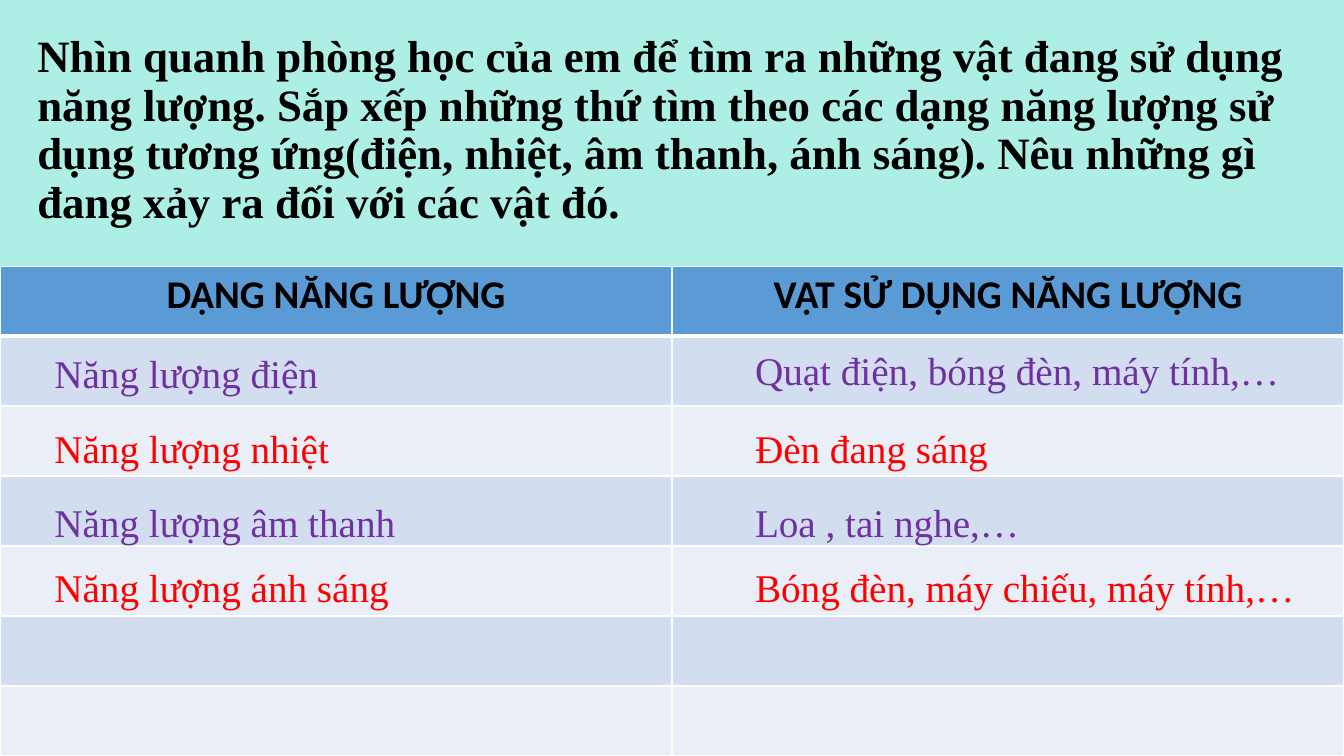
from lxml.etree import SubElement as Sub
from pptx import Presentation
from pptx.dml.color import RGBColor as RGB
from pptx.enum.text import MSO_ANCHOR as Anchor, MSO_AUTO_SIZE as Auto, PP_ALIGN as Align
from pptx.oxml.ns import qn
from pptx.util import Inches, Pt

MINT = RGB(0xAD, 0xEF, 0xE4)
BLUE = RGB(0x5B, 0x9B, 0xD5)
PALE = RGB(0xD2, 0xDE, 0xEF)
LIGHT = RGB(0xEA, 0xEF, 0xF7)
WHITE = RGB(0xFF, 0xFF, 0xFF)
BLACK = RGB(0, 0, 0)
RED = RGB(0xFF, 0, 0)
PURPLE = RGB(0x70, 0x30, 0xA0)
SERIF, SANS = "Times New Roman", "Calibri"

TITLE = ("Nhìn quanh phòng học của em để tìm ra những vật đang sử dụng năng lượng. "
         "Sắp xếp những thứ tìm theo các dạng năng lượng sử dụng tương ứng"
         "(điện, nhiệt, âm thanh, ánh sáng). Nêu những gì đang xảy ra đối với các vật đó.")
HEADS = ["DẠNG NĂNG LƯỢNG", "VẬT SỬ DỤNG NĂNG LƯỢNG"]
# Energy, its top, things that use it, their top, colour
PAIRS = [
    ("Năng lượng điện", 3.42, "Quạt điện, bóng đèn, máy tính,…", 3.39, PURPLE),
    ("Năng lượng nhiệt", 4.16, "Đèn đang sáng", 4.16, RED),
    ("Năng lượng âm thanh", 4.89, "Loa , tai nghe,…", 4.89, PURPLE),
    ("Năng lượng ánh sáng", 5.54, "Bóng đèn, máy chiếu, máy tính,…", 5.54, RED),
]


class Board:
    def __init__(self, slide):
        self.slide = slide
        fill = slide.background.fill
        fill.solid()
        fill.fore_color.rgb = MINT

    def style(self, para, face, size, color, bold=False):
        font = para.font
        font.name, font.size, font.bold = face, Pt(size), bold
        font.color.rgb = color

    def title(self, text, left, top, width, height):
        shape = self.slide.shapes.title
        shape.left, shape.top = Inches(left), Inches(top)
        shape.width, shape.height = Inches(width), Inches(height)
        frame = shape.text_frame
        frame.text = text
        frame.word_wrap = True
        frame.auto_size = Auto.NONE
        frame.vertical_anchor = Anchor.MIDDLE
        para = frame.paragraphs[0]
        para.alignment = Align.LEFT
        para.line_spacing = 0.9
        self.style(para, SERIF, 32, BLACK, True)

    def label(self, text, left, top, width, color):
        box = self.slide.shapes.add_textbox(
            Inches(left), Inches(top), Inches(width), Inches(0.57))
        frame = box.text_frame
        frame.word_wrap = True
        frame.auto_size = Auto.SHAPE_TO_FIT_TEXT
        frame.text = text
        self.style(frame.paragraphs[0], SERIF, 28, color)

    def edge(self, cell, side, width):
        props = cell._tc.get_or_add_tcPr()
        line = Sub(props, qn("a:ln" + side), w=str(Pt(width)))
        Sub(Sub(line, qn("a:solidFill")), qn("a:srgbClr"), val=str(WHITE))

    def table(self, heads, count, left, top, width, height):
        grid = self.slide.shapes.add_table(
            count, len(heads), Inches(left), Inches(top),
            Inches(width), Inches(height)).table
        for row in range(count):
            for col, head in enumerate(heads):
                cell = grid.cell(row, col)
                for side in "LRTB":
                    thick = (row, side) in ((0, "B"), (1, "T"))
                    self.edge(cell, side, 3 if thick else 1)
                cell.fill.solid()
                cell.fill.fore_color.rgb = (LIGHT, PALE)[row % 2] if row else BLUE
                if row == 0:
                    cell.text = head
                    para = cell.text_frame.paragraphs[0]
                    para.alignment = Align.CENTER
                    self.style(para, SANS, 28, BLACK, True)


def main():
    deck = Presentation()
    deck.slide_width, deck.slide_height = Inches(13.33), Inches(7.5)
    board = Board(deck.slides.add_slide(deck.slide_layouts[5]))

    # Question and empty grid
    board.title(TITLE, 0.27, 0.24, 12.87, 2.12)
    board.table(HEADS, 7, 0, 2.64, 13.33, 4.86)

    # Answers laid over the grid
    for energy, high, things, top, color in PAIRS:
        board.label(energy, 0.44, high, 5.19, color)
        board.label(things, 7.39, top, 5.74, color)

    deck.save("out.pptx")


if __name__ == "__main__":
    main()
